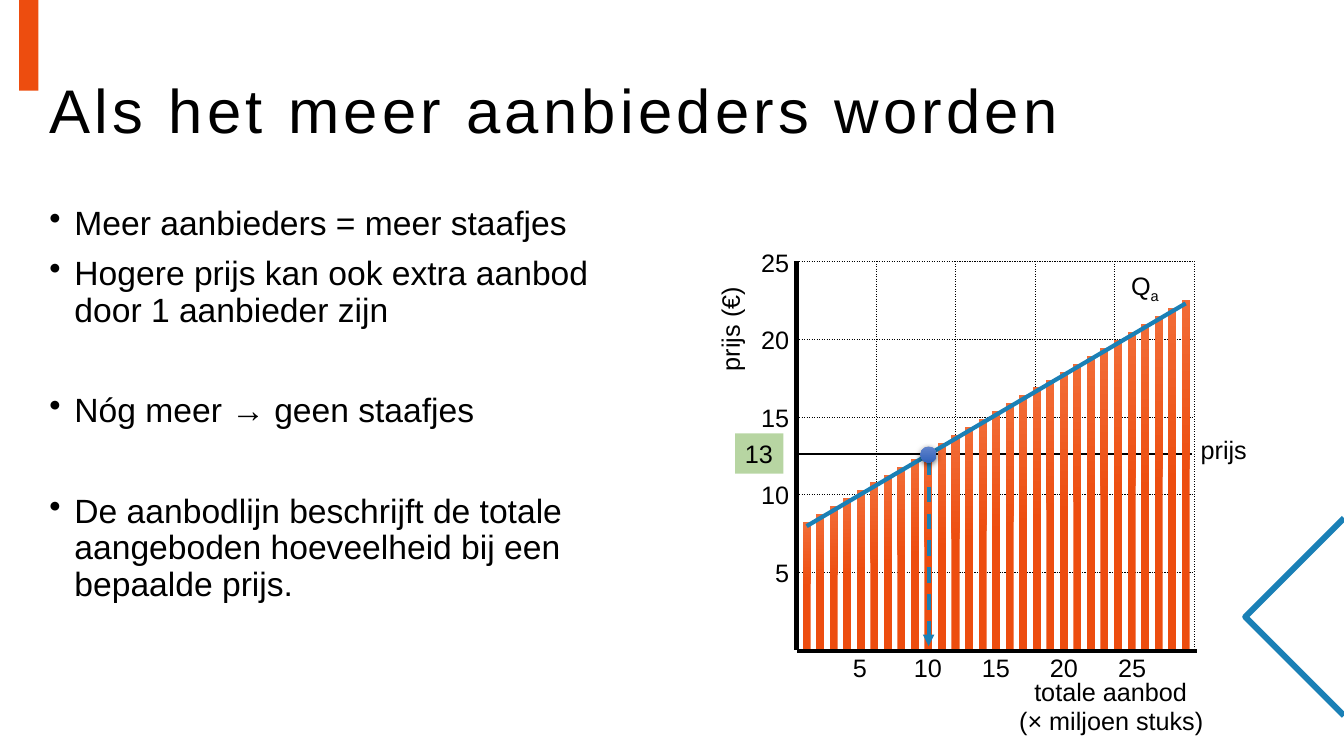
"""Build the slide on how more suppliers shape the supply line."""
from lxml import etree
from pptx import Presentation
from pptx import util as u
from pptx.dml.color import RGBColor
from pptx.enum import dml, shapes, text
from pptx.oxml import parse_xml
from pptx.oxml.ns import nsdecls, qn

COLORS = {
    "black": "000000",
    "orange": "ED4D0F",
    "light_orange": "F26C36",
    "blue": "1A80B6",
    "green": "70AD47",
    "dot_top": "6183CB",
    "dot_bottom": "3062BB",
}


def rgb(name):
    return RGBColor.from_string(COLORS[name])


class SupplySlide:
    font = "Arial"
    label_size = 18
    label_height = 0.4

    def __init__(self, presentation):
        self.slide = presentation.slides.add_slide(presentation.slide_layouts[6])

    def style(self, paragraph, size):
        paragraph.font.name = self.font
        paragraph.font.size = u.Pt(size)
        paragraph.font.color.rgb = rgb("black")

    def shape(self, kind, left, top, width, height):
        shape = self.slide.shapes.add_shape(
            kind, u.Inches(left), u.Inches(top), u.Inches(width), u.Inches(height))
        shape.shadow.inherit = False
        shape.line.fill.background()
        return shape

    def rectangle(self, left, top, width, height, color, opacity=100):
        shape = self.shape(shapes.MSO_SHAPE.RECTANGLE, left, top, width, height)
        shape.fill.solid()
        shape.fill.fore_color.rgb = rgb(color)
        if opacity < 100:
            color_element = shape._element.spPr.find(qn("a:solidFill"))[0]
            etree.SubElement(color_element, qn("a:alpha"), val=str(opacity * 1000))
        return shape

    def gradient(self, shape, stops, angle):
        shape.fill.gradient()
        shape.fill.gradient_angle = angle
        for stop, (position, color) in zip(shape.fill.gradient_stops, stops):
            stop.position = position
            stop.color.rgb = rgb(color)

    def bar(self, left, top, width, height):
        shape = self.shape(shapes.MSO_SHAPE.RECTANGLE, left, top, width, height)
        self.gradient(shape, [(0.49, "orange"), (1, "light_orange")], 90)

    def dot(self, left, top, size):
        shape = self.shape(shapes.MSO_SHAPE.OVAL, left, top, size, size)
        self.gradient(shape, [(0, "dot_top"), (1, "dot_bottom")], 270)
        effects = shape._element.spPr.find(qn("a:effectLst"))
        effects.append(parse_xml(
            f'<a:outerShdw {nsdecls("a")} blurRad="57150" dist="19050" dir="5400000">'
            f'<a:srgbClr val="{COLORS["black"]}"><a:alpha val="63000"/></a:srgbClr>'
            '</a:outerShdw>'))

    def line(self, start, end, width, color="black", dashed=False, arrow=False):
        line = self.slide.shapes.add_connector(
            shapes.MSO_CONNECTOR.STRAIGHT, *map(u.Inches, (*start, *end)))
        line.line.color.rgb = rgb(color)
        line.line.width = u.Pt(width)
        if dashed:
            line.line.dash_style = dml.MSO_LINE.DASH
        if arrow:
            etree.SubElement(line.line._get_or_add_ln(), qn("a:tailEnd"), type="triangle")
        etree.SubElement(line._element.spPr, qn("a:effectLst"))

    def outline(self, points, color, width):
        builder = self.slide.shapes.build_freeform(
            *map(u.Inches, points[0]), scale=1.0)
        builder.add_line_segments(
            [tuple(map(u.Inches, point)) for point in points[1:]], close=False)
        shape = builder.convert_to_shape()
        shape.shadow.inherit = False
        shape.fill.background()
        shape.line.color.rgb = rgb(color)
        shape.line.width = u.Pt(width)

    def text_box(self, left, top, width, height):
        box = self.slide.shapes.add_textbox(
            u.Inches(left), u.Inches(top), u.Inches(width), u.Inches(height))
        box.text_frame.word_wrap = True
        return box

    def write_label(self, shape, wording):
        shape.text_frame.word_wrap = False
        paragraph = shape.text_frame.paragraphs[0]
        paragraph.add_run().text = wording
        paragraph.alignment = text.PP_ALIGN.LEFT
        self.style(paragraph, self.label_size)
        return paragraph

    def label(self, wording, left, top, width, rotation=0, subscript=""):
        box = self.text_box(left, top, width, self.label_height)
        box.rotation = rotation
        paragraph = self.write_label(box, wording)
        if subscript:
            run = paragraph.add_run()
            run.text = subscript
            run._r.get_or_add_rPr().set("baseline", "-25000")

    def title(self, wording, left, top, width, height):
        frame = self.text_box(left, top, width, height).text_frame
        frame.vertical_anchor = text.MSO_ANCHOR.MIDDLE
        paragraph = frame.paragraphs[0]
        run = paragraph.add_run()
        run.text = wording
        run._r.get_or_add_rPr().set("spc", "300")
        paragraph.line_spacing = 0.9
        self.style(paragraph, 44)

    def bullets(self, items, left, top, width, height):
        frame = self.text_box(left, top, width, height).text_frame
        for index, (wording, space) in enumerate(items):
            paragraph = frame.add_paragraph() if index else frame.paragraphs[0]
            paragraph.text = wording
            paragraph.line_spacing = 0.9
            paragraph.space_before = u.Pt(space)
            self.style(paragraph, 24)
            properties = paragraph._p.get_or_add_pPr()
            properties.set("marL", str(u.Inches(0.25)))
            properties.set("indent", str(u.Inches(-0.25)))
            bullet = parse_xml(f'<a:buChar {nsdecls("a")} char="•"/>')
            properties.find(qn("a:defRPr")).addprevious(bullet)


def draw_chart(slide):
    left, right, top, bottom = 7.9, 11.84, 2.59, 6.45
    row, column = (bottom - top) / 5, (right - left) / 5
    slide.line((left, top), (left, bottom), 3)
    for step in range(5):
        y = top + step * row
        x = left + (step + 1) * column
        slide.line((left, y), (right, y), 0.25, dashed=True)
        slide.line((x, top), (x, bottom), 0.25, dashed=True)
        amount = 5 * (step + 1)
        width = 0.34 if amount < 10 else 0.48
        slide.label(str(amount), 7.93 - width, 5.48 - step * 0.77, width)
        slide.label(str(amount), 8.53 + step * 0.675 - width / 2, 6.42, width)
    slide.label("totale aanbod", 10.16, 6.66, 1.73)
    slide.label("(× miljoen stuks)", 10.01, 6.95, 2.05)
    slide.label("prijs (€)", 6.72, 3.06, 1.04, rotation=270)
    slide.line((11.87, 6.46), (left, 6.46), 3)

    price_box = slide.rectangle(7.29, 4.3, 0.48, 0.4, "green", opacity=50)
    slide.write_label(price_box, "13")
    slide.label("prijs", 11.81, 4.26, 0.66)
    slide.line((left, 4.5), (11.82, 4.5), 1.5)
    slide.label("Q", 11.12, 2.63, 0.49, subscript="a")

    bar_count = 29
    for index in range(bar_count):
        share = index / (bar_count - 1)
        height = 1.26 + 2.2 * share
        slide.bar(7.96 + 3.76 * share, 6.44 - height, 0.08, height)

    slide.line((11.76, 3.01), (8, 5.22), 3, "blue")
    slide.line((9.21, 4.56), (9.21, 6.41), 2.75, "blue", dashed=True, arrow=True)
    slide.dot(9.13, 4.43, 0.16)


def main():
    presentation = Presentation()
    presentation.slide_width = u.Inches(13.33)
    presentation.slide_height = u.Inches(7.5)
    slide = SupplySlide(presentation)
    slide.rectangle(0.19, 0, 0.19, 0.9, "orange")
    slide.outline([(13.33, 5.14), (12.35, 6.12), (13.33, 7.1)], "blue", 4.25)
    slide.title("Als het meer aanbieders worden", 0.39, 0.4, 12.58, 1.45)
    slide.bullets([
        ("Meer aanbieders = meer staafjes", 10),
        ("Hogere prijs kan ook extra aanbod door 1 aanbieder zijn", 10),
        ("Nóg meer → geen staafjes", 46),
        ("De aanbodlijn beschrijft de totale aangeboden hoeveelheid bij een bepaalde prijs.", 46),
    ], 0.39, 2, 5.78, 5.1)
    draw_chart(slide)
    presentation.save("out.pptx")


if __name__ == "__main__":
    main()
